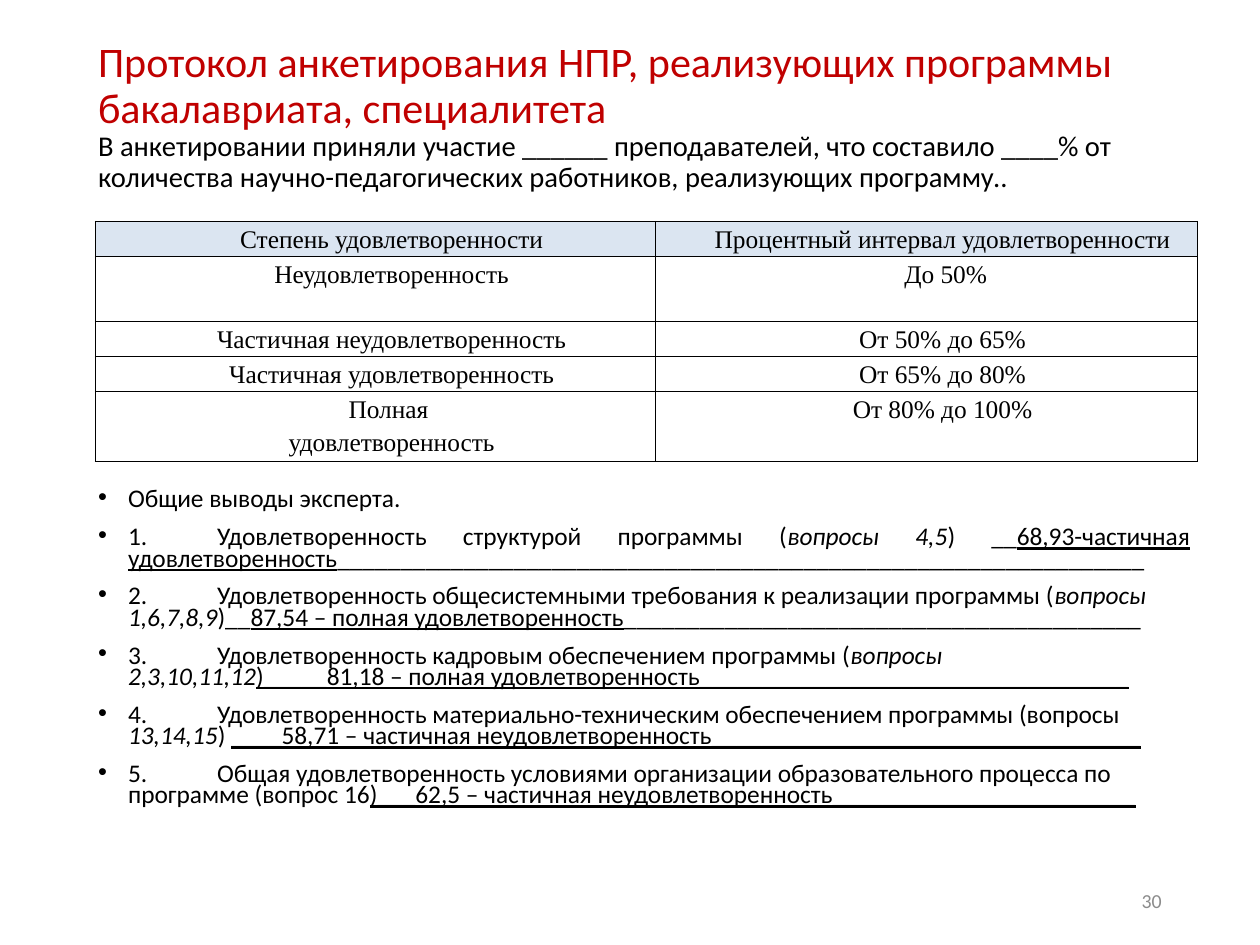
"""Build the slide with the teacher survey protocol."""
from lxml.etree import SubElement
from pptx import Presentation
from pptx.dml.color import RGBColor
from pptx.enum.text import MSO_ANCHOR as Anchor, PP_ALIGN as Align
from pptx.oxml.ns import qn
from pptx.util import Pt


def color(value):
    return RGBColor.from_string(value)


def add_text(paragraph, text, size=16, name="Calibri", fill="000000", italic=False, underline=False):
    run = paragraph.add_run()
    run.text = text
    run.font.size = Pt(size)
    run.font.name = name
    run.font.color.rgb = color(fill)
    run.font.italic = italic
    run.font.underline = underline


presentation = Presentation()
presentation.slide_width = Pt(793.75)
presentation.slide_height = Pt(595.25)
slide = presentation.slides.add_slide(presentation.slide_layouts[6])

frames = {}
for part, left, top, width, height in (
    ("title", 54.7, 26, 711.4, 110),
    ("conclusions", 54.7, 305.7, 702, 230.4),
    ("number", 560.2, 551.2, 178.6, 31.7),
):
    frame = slide.shapes.add_textbox(Pt(left), Pt(top), Pt(width), Pt(height)).text_frame
    frame.word_wrap = True
    frames[part] = frame

title = frames["title"]
title.margin_top = title.margin_bottom = 0
heading = title.paragraphs[0]
add_text(heading, "Протокол анкетирования НПР, реализующих программы бакалавриата, специалитета",
         size=26.5, fill="C00000")
summary = title.add_paragraph()
add_text(summary, "В анкетировании приняли участие ______ преподавателей, что составило ____% от "
         "количества научно-педагогических работников, реализующих программу..", size=18)
for paragraph in (heading, summary):
    paragraph.line_spacing = 0.9

rows = [
    ("Степень удовлетворенности", "Процентный интервал удовлетворенности", 0),
    ("Неудовлетворенность", " До 50%", 41),
    ("Частичная неудовлетворенность", "От 50% до 65%", 0),
    ("Частичная удовлетворенность", "От 65% до 80%", 0),
    ("Полная \nудовлетворенность", "От 80% до 100%", 0),
]
table_shape = slide.shapes.add_table(len(rows), 2, Pt(60.2), Pt(139.5), Pt(694.1), Pt(154.8))
table = table_shape.table
table.first_row = table.horz_banding = False
table.columns[0].width = Pt(352.8)
table.columns[1].width = Pt(341.3)
for row_index, (degree, interval, height) in enumerate(rows):
    table.rows[row_index].height = Pt(height)
    for column_index, text in enumerate((degree, interval)):
        cell = table.cell(row_index, column_index)
        cell.margin_left = cell.margin_right = Pt(5)
        cell.margin_top = cell.margin_bottom = 0
        cell_properties = cell._tc.get_or_add_tcPr()
        for side in ("a:lnL", "a:lnR", "a:lnT", "a:lnB"):
            border = SubElement(cell_properties, qn(side), w=str(Pt(1)))
            SubElement(SubElement(border, qn("a:solidFill")), qn("a:srgbClr"), val="000000")
        if row_index == 0:
            cell.fill.solid()
            cell.fill.fore_color.rgb = color("DBE5F1")
        else:
            cell.fill.background()
        for line_index, line in enumerate(text.split("\n")):
            frame = cell.text_frame
            paragraph = frame.add_paragraph() if line_index else frame.paragraphs[0]
            paragraph.alignment = Align.CENTER
            paragraph.line_spacing = 1.15
            paragraph._p.get_or_add_pPr().set("indent", str(Pt(20.2)))
            add_text(paragraph, line, name="Times New Roman")
table_shape.height = Pt(154.8)

plain, italic, underline = {}, {"italic": True}, {"underline": True}
conclusions = [
    [("Общие выводы эксперта.", plain)],
    [("1.\tУдовлетворенность структурой программы (", plain), ("вопросы 4,5", italic),
     (") __", plain), ("68,93-частичная удовлетворенность", underline), ("_" * 64, plain)],
    [("2.\tУдовлетворенность общесистемными требования к реализации программы (", plain),
     ("вопросы 1,6,7,8,9", italic), (")__", plain),
     ("87,54 – полная удовлетворенность", underline), ("_" * 41, plain)],
    [("3.\tУдовлетворенность кадровым обеспечением программы (", plain),
     ("вопросы 2,3,10,11,12", italic),
     (")_____81,18 – полная удовлетворенность" + "_" * 34, underline)],
    [("4.\tУдовлетворенность материально-техническим обеспечением программы (вопросы ", plain),
     ("13,14,15", italic), (") ", plain),
     ("____58,71 – частичная неудовлетворенность" + "_" * 34, underline)],
    [("5.\tОбщая удовлетворенность условиями организации образовательного процесса по "
      "программе (вопрос 16", plain),
     (")___62,5 – частичная неудовлетворенность" + "_" * 24, underline)],
]
for index, pieces in enumerate(conclusions):
    frame = frames["conclusions"]
    paragraph = frame.add_paragraph() if index else frame.paragraphs[0]
    paragraph.line_spacing = 0.7
    paragraph.space_before = Pt(10.4 if index else 0)
    paragraph.alignment = Align.JUSTIFY if index == 1 else Align.LEFT
    properties = paragraph._p.get_or_add_pPr()
    properties.set("marL", str(Pt(18.9)))
    properties.set("indent", str(Pt(-18.9)))
    properties.set("defTabSz", str(Pt(75)))
    SubElement(properties, qn("a:buFont"), typeface="Arial")
    SubElement(properties, qn("a:buChar"), char="•")
    for text, style in pieces:
        add_text(paragraph, text, **style)

frames["number"].vertical_anchor = Anchor.MIDDLE
page_number = frames["number"].paragraphs[0]
page_number.alignment = Align.RIGHT
add_text(page_number, "30", size=12.5, fill="8C8C8C")

presentation.save("out.pptx")
